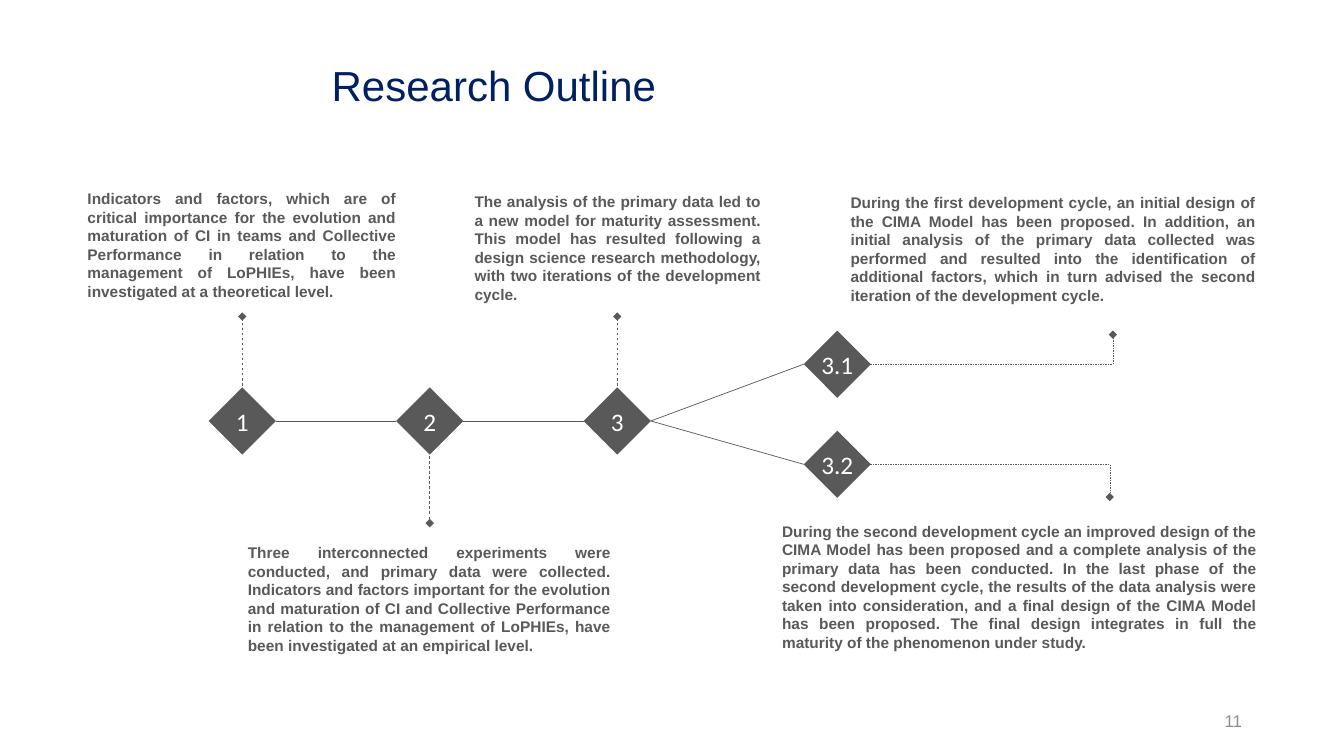
from lxml.etree import SubElement as add_element
from pptx import Presentation
from pptx.dml.color import RGBColor
from pptx.enum.dml import MSO_LINE_DASH_STYLE as Dash
from pptx.enum.shapes import MSO_AUTO_SHAPE_TYPE as Preset, MSO_CONNECTOR_TYPE as Route
from pptx.enum.text import MSO_ANCHOR as Anchor, MSO_AUTO_SIZE as Fit, PP_ALIGN as Align
from pptx.oxml.ns import qn
from pptx.util import Inches, Pt

COLUMNS, ROWS = 40, 22.5
GREY, NAVY, WHITE, PALE = "595959", "002060", "FFFFFF", "8C8C8C"
FIRST, STEP, MAIN_ROW = 7.21, 5.58, 12.53
BRANCH, UPPER_ROW, LOWER_ROW = 24.92, 10.84, 13.82
HALF, HIDDEN = 1, 0.8

NODES = [("1", FIRST, MAIN_ROW), ("2", FIRST + STEP, MAIN_ROW), ("3", FIRST + 2 * STEP, MAIN_ROW),
         ("3.1", BRANCH, UPPER_ROW), ("3.2", BRANCH, LOWER_ROW)]
LINKS = [(0, 1), (1, 2), (2, 3), (2, 4)]
LEADERS = [(0, -1, 9.42), (1, 1, 15.57), (2, -1, 9.42)]
ELBOWS = [(3, 33.12, 9.96), (4, 33.03, 14.79)]
NOTES = [
    ((2.31, 5.49, 9.78, 3.63),
     "Indicators and factors, which are of critical importance for the evolution and maturation of CI "
     "in teams and Collective Performance in relation to the management of LoPHIEs, have been "
     "investigated at a theoretical level."),
    ((7.08, 16.02, 11.4, 3.63),
     "Three interconnected experiments were conducted, and primary data were collected. Indicators and "
     "factors important for the evolution and maturation of CI and Collective Performance in relation "
     "to the management of LoPHIEs, have been investigated at an empirical level."),
    ((13.83, 5.58, 9.12, 3.63),
     "The analysis of the primary data led to a new model for maturity assessment. This model has "
     "resulted following a design science research methodology, with two iterations of the development "
     "cycle."),
    ((25.02, 5.61, 12.66, 3.63),
     "During the first development cycle, an initial design of the CIMA Model has been proposed. In "
     "addition, an initial analysis of the primary data collected was performed and resulted into the "
     "identification of additional factors, which in turn advised the second iteration of the "
     "development cycle."),
    ((22.98, 15.39, 14.73, 4.2),
     "During the second development cycle an improved design of the CIMA Model has been proposed and a "
     "complete analysis of the primary data has been conducted. In the last phase of the second "
     "development cycle, the results of the data analysis were taken into consideration, and a final "
     "design of the CIMA Model has been proposed. The final design integrates in full the maturity of "
     "the phenomenon under study."),
]


def color(value):
    return RGBColor.from_string(value)


def write(frame, text, size=11, font="Arial", ink=GREY, bold=False, align=Align.LEFT,
          anchor=Anchor.TOP, fit=Fit.NONE, wrap=True, spacing=1.0):
    frame.word_wrap, frame.auto_size, frame.vertical_anchor = wrap, fit, anchor
    para = frame.paragraphs[0]
    para.alignment, para.line_spacing = align, spacing
    span = para.add_run()
    span.text = text
    span.font.name, span.font.size, span.font.bold = font, Pt(size), bold
    span.font.color.rgb = color(ink)


class Outline:
    """Draws the outline's elements on one page, measured in grid cells."""

    def __init__(self, deck):
        self.cell_width = deck.slide_width / COLUMNS
        self.cell_height = deck.slide_height / ROWS
        self.page = deck.slides.add_slide(deck.slide_layouts[5])

    def across(self, columns):
        return round(columns * self.cell_width)

    def down(self, rows):
        return round(rows * self.cell_height)

    def area(self, left, top, width, height):
        return self.across(left), self.down(top), self.across(width), self.down(height)

    def title(self, area, text):
        box = self.page.shapes.title
        box.left, box.top, box.width, box.height = self.area(*area)
        write(box.text_frame, text, size=30, ink=NAVY, anchor=Anchor.MIDDLE, spacing=0.9)

    def text(self, area, text, **style):
        box = self.page.shapes.add_textbox(*self.area(*area))
        write(box.text_frame, text, **style)

    def node(self, label, column, row):
        area = self.area(column - HALF, row - HALF, 2 * HALF, 2 * HALF)
        box = self.page.shapes.add_shape(Preset.DIAMOND, *area)
        box.shadow.inherit = False
        box.fill.solid()
        box.fill.fore_color.rgb = color(GREY)
        box.line.fill.background()
        frame = box.text_frame
        frame.margin_left = frame.margin_right = frame.margin_top = frame.margin_bottom = 0
        write(frame, label, size=18, font="Calibri", ink=WHITE, align=Align.CENTER,
              anchor=Anchor.MIDDLE, wrap=False)

    def line(self, start, end, width=0.5, leader=False, bent=False):
        route = Route.ELBOW if bent else Route.STRAIGHT
        line = self.page.shapes.add_connector(route, self.across(start[0]), self.down(start[1]),
                                              self.across(end[0]), self.down(end[1]))
        line.line.color.rgb = color(GREY)
        line.line.width = Pt(width)
        properties = line._element.spPr
        if bent:
            properties.find(qn("a:prstGeom")).set("prst", "bentConnector2")
        if leader:
            line.line.dash_style = Dash.DASH
            for tip in ("a:headEnd", "a:tailEnd"):
                add_element(properties.find(qn("a:ln")), qn(tip), type="diamond")
        add_element(properties, qn("a:effectLst"))


def main():
    deck = Presentation()
    deck.slide_width, deck.slide_height = Inches(13.33), Inches(7.5)
    outline = Outline(deck)
    outline.title((9.57, 0.45, 30.42, 4.35), "Research Outline")
    for start, end in LINKS:
        _, left, left_row = NODES[start]
        _, right, right_row = NODES[end]
        outline.line((left + HALF, left_row), (right - HALF, right_row))
    for index, side, end_row in LEADERS:
        _, column, row = NODES[index]
        outline.line((column, row + side * HIDDEN), (column, end_row), leader=True)
    for index, end_column, end_row in ELBOWS:
        _, column, row = NODES[index]
        outline.line((column + HIDDEN, row), (end_column, end_row), width=0.25, leader=True, bent=True)
    for node in NODES:
        outline.node(*node)
    for area, text in NOTES:
        outline.text(area, text, bold=True, align=Align.JUSTIFY, fit=Fit.SHAPE_TO_FIT_TEXT)
    outline.text((34.11, 20.85, 3.15, 1.2), "11", size=12, ink=PALE, align=Align.RIGHT,
                 anchor=Anchor.MIDDLE)
    deck.save("out.pptx")


if __name__ == "__main__":
    main()
